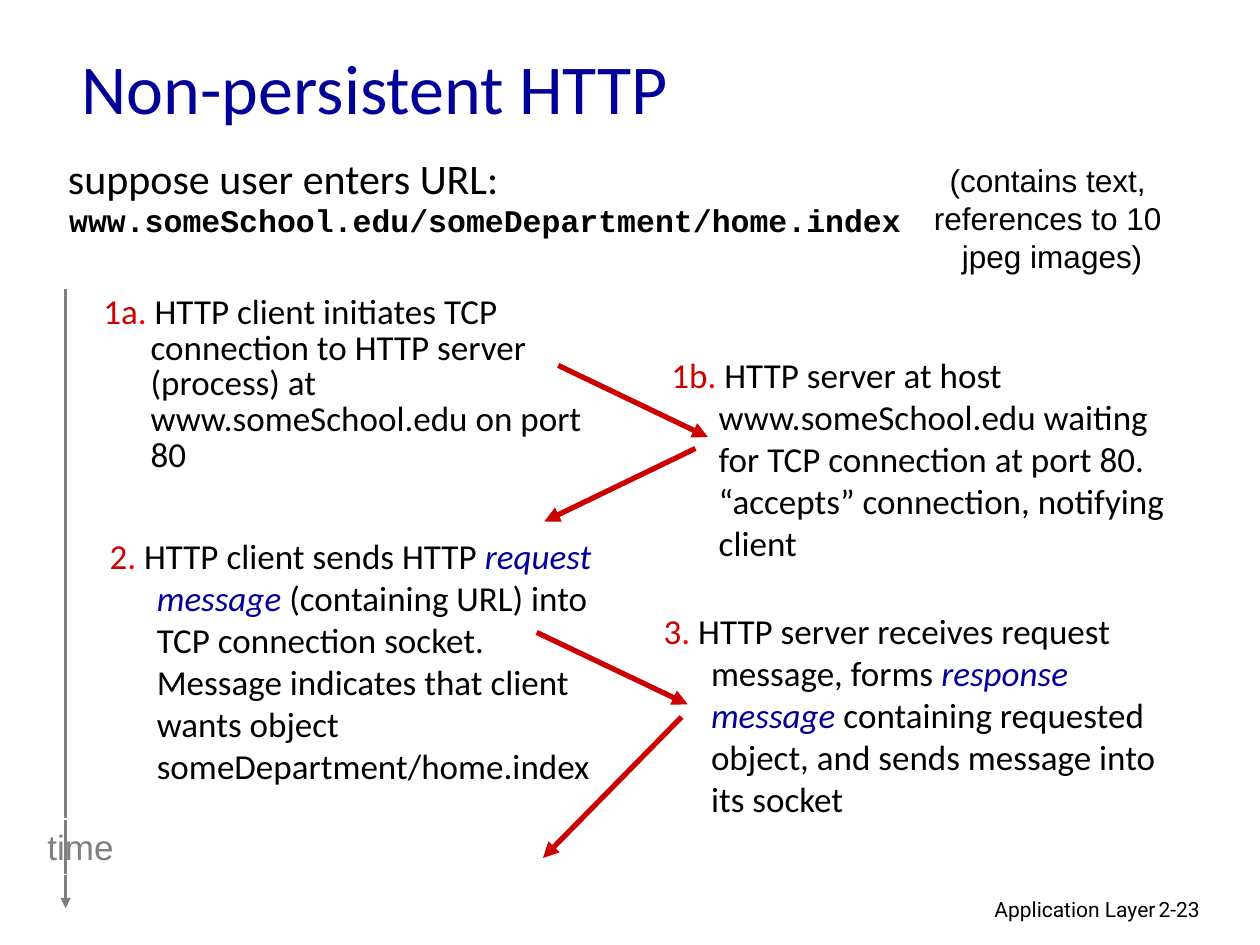
import pptx
import pptx.util
import pptx.dml.color
import pptx.enum.text
import pptx.enum.shapes
import pptx.oxml.ns
from lxml import etree

Pt = pptx.util.Pt
ALIGN = pptx.enum.text.PP_ALIGN
ANCHOR = pptx.enum.text.MSO_ANCHOR
qn = pptx.oxml.ns.qn

BLACK, BLUE, RED, DOT, GRAY = "000000", "000099", "CC0000", "FF0000", "808080"


def color(code):
    return pptx.dml.color.RGBColor.from_string(code)


class Deck:
    font = "Calibri"
    hang = 27

    def __init__(self, wide, high):
        self.prs = pptx.Presentation()
        self.prs.slide_width, self.prs.slide_height = Pt(wide), Pt(high)
        self.slide = self.prs.slides.add_slide(self.prs.slide_layouts[5])

    def style(self, run, size, ink, font=None, bold=False, slant=False):
        face = run.font
        face.name, face.size = font or self.font, Pt(size)
        face.bold, face.italic = bold, slant
        face.color.rgb = color(ink)

    def title(self, text, x, y, w, h):
        shape = self.slide.shapes.title
        shape.left, shape.top, shape.width, shape.height = map(Pt, (x, y, w, h))
        frame = shape.text_frame
        frame.text = text
        frame.vertical_anchor = ANCHOR.MIDDLE
        frame.paragraphs[0].alignment = ALIGN.LEFT
        self.style(frame.paragraphs[0].runs[0], 40, BLUE)

    def label(self, text, x, y, w, h, size, ink=BLACK, font=None,
              align=ALIGN.LEFT, wrap=True, bold=False):
        box = self.slide.shapes.add_textbox(*map(Pt, (x, y, w, h)))
        frame = box.text_frame
        frame.text = text
        frame.word_wrap = wrap
        for para in frame.paragraphs:
            para.alignment = align
            for run in para.runs:
                self.style(run, size, ink, font, bold)
        return box

    def indent(self, box, size, tight):
        para = box.text_frame.paragraphs[0]
        para.space_before = Pt(size * 0.2)
        if tight:
            para.line_spacing = 0.85
        props = para._p.get_or_add_pPr()
        props.set("marL", str(Pt(self.hang)))
        props.set("indent", str(Pt(-self.hang)))

    def step(self, mark, parts, x, y, w, h, tight=False):
        """Numbered step; every second part is an emphasised term."""
        box = self.label(mark, x, y, w, h, 20, RED)
        para = box.text_frame.paragraphs[0]
        for i, text in enumerate([".", *parts]):
            run = para.add_run()
            run.text = text
            term = i > 0 and i % 2 == 0
            ink = DOT if i == 0 else BLUE if term else BLACK
            self.style(run, 20, ink, slant=term)
        self.indent(box, 20, tight)

    def arrow(self, x1, y1, x2, y2, ink=RED, width=3):
        line = self.slide.shapes.add_connector(
            pptx.enum.shapes.MSO_CONNECTOR.STRAIGHT, *map(Pt, (x1, y1, x2, y2)))
        line.line.color.rgb = color(ink)
        line.line.width = Pt(width)
        etree.SubElement(line.line._get_or_add_ln(), qn("a:tailEnd"), type="triangle")
        etree.SubElement(line._element.spPr, qn("a:effectLst"))


def main():
    deck = Deck(720, 540)

    # Footer
    deck.label("Application Layer", 439, 509, 228.5, 22, 12, font="Roboto",
               align=ALIGN.RIGHT)
    deck.label("2-23", 655, 509, 53, 22, 12, font="Roboto")

    # Time axis
    deck.arrow(37.5, 165, 37.5, 519, GRAY, 1.5)

    # Title and URL
    deck.title("Non-persistent HTTP", 39.6, 15, 612, 68.5)
    lead = deck.label("suppose user enters URL:", 31.7, 87.8, 625.7, 36.7, 24)
    deck.indent(lead, 24, True)

    # Steps
    deck.step("1a", [" HTTP client initiates TCP connection to HTTP server "
                     "(process) at www.someSchool.edu on port 80"],
              52, 165.6, 310, 150, tight=True)
    deck.step("2", [" HTTP client sends HTTP ", "request message",
                    " (containing URL) into TCP connection socket. Message "
                    "indicates that client wants object "
                    "someDepartment/home.index"], 55.5, 301.7, 300, 85)
    deck.step("1b", [" HTTP server at host www.someSchool.edu waiting for TCP "
                     "connection at port 80. “accepts” connection, notifying "
                     "client"], 376.6, 198.7, 300, 119)
    deck.step("3", [" HTTP server receives request message, forms ",
                    "response message", " containing requested object, and "
                    "sends message into its socket"], 372.2, 344.9, 300, 142)

    # Messages between client and server
    for ends in [(306.7, 361.4, 393, 402.5), (389.5, 409.7, 310.3, 490.3),
                 (319, 208.8, 404.6, 249.8), (397.4, 256.3, 311, 298)]:
        deck.arrow(*ends)

    # Axis name, with a white outline that breaks the axis
    name = deck.label("time", 19.4, 468, 53.3, 31.7, 20, GRAY, "Arial",
                      ALIGN.CENTER, wrap=False)
    name.line.color.rgb = color("FFFFFF")
    name.line.width = Pt(0.75)

    # Note and address
    deck.label("(contains text, \nreferences to 10 \njpeg images)",
               526.3, 88.6, 149.8, 72, 18, font="Arial", align=ALIGN.CENTER,
               wrap=False)
    link = deck.label("www.someSchool.edu/someDepartment/home.index",
                      32.4, 114.5, 625.7, 36.7, 18, font="Courier New", bold=True)
    deck.indent(link, 18, True)

    deck.prs.save("out.pptx")


if __name__ == "__main__":
    main()
